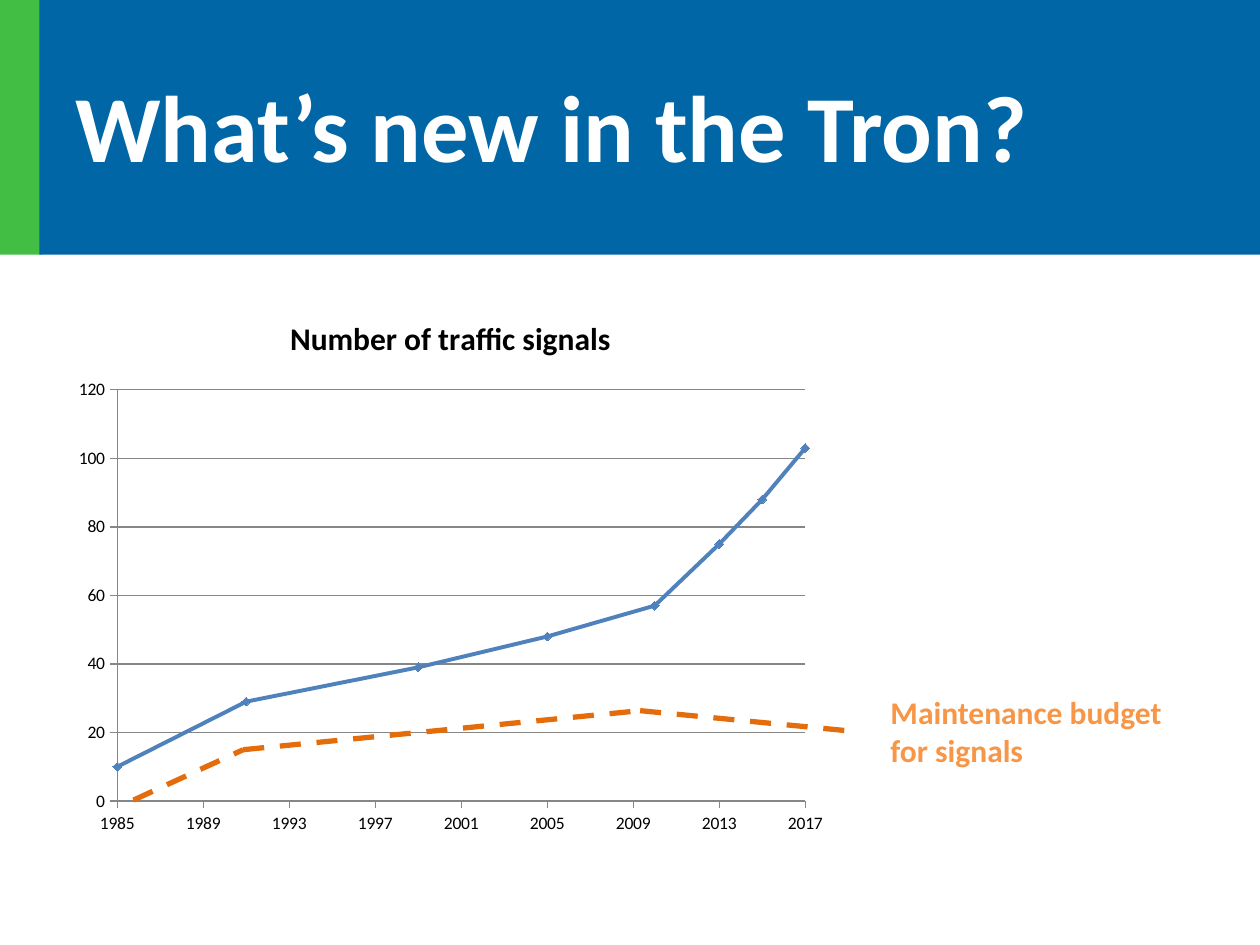
from lxml import etree
from pptx import Presentation
from pptx.chart.data import XyChartData
from pptx.dml.color import RGBColor
from pptx.enum.chart import XL_CHART_TYPE as Kind, XL_MARKER_STYLE as Mark, XL_TICK_MARK as Tick
from pptx.enum.dml import MSO_LINE
from pptx.enum.shapes import MSO_CONNECTOR, MSO_SHAPE
from pptx.enum.text import MSO_ANCHOR
from pptx.oxml import parse_xml
from pptx.oxml.ns import nsdecls, qn
from pptx.util import Pt

GREEN = RGBColor(0x42, 0xBE, 0x44)
NAVY = RGBColor(0x00, 0x66, 0xA5)
WHITE = RGBColor(0xFF, 0xFF, 0xFF)
BLACK = RGBColor(0x00, 0x00, 0x00)
GRAY = RGBColor(0x86, 0x86, 0x86)
BLUE = RGBColor(0x4F, 0x81, 0xBD)
RUST = RGBColor(0xE4, 0x6C, 0x0A)
PEACH = RGBColor(0xF7, 0x96, 0x46)


def style(font, size, color, bold):
    font.name = "Calibri"
    font.size = Pt(size)
    font.color.rgb = color
    font.bold = bold


def label(text, box, size, color, anchor):
    frame = slide.shapes.add_textbox(*map(Pt, box)).text_frame
    frame.word_wrap = True
    frame.vertical_anchor = anchor
    para = frame.paragraphs[0]
    para.text = text
    style(para.font, size, color, True)


deck = Presentation()
deck.slide_width = Pt(720)
deck.slide_height = Pt(540)
slide = deck.slides.add_slide(deck.slide_layouts[6])

for left, width, color in [(-3, 27, GREEN), (22.5, 697.5, NAVY)]:
    band = slide.shapes.add_shape(MSO_SHAPE.RECTANGLE, Pt(left), Pt(-2), Pt(width), Pt(147.5))
    band.shadow.inherit = False
    band.fill.solid()
    band.fill.fore_color.rgb = color
    band.line.fill.background()

label("What’s new in the Tron?", (36, 26, 648, 90), 54, WHITE, MSO_ANCHOR.MIDDLE)

data = XyChartData()
signals = data.add_series("Series 1")
for year, count in [(1985, 10), (1991, 29), (1999, 39), (2005, 48),
                    (2010, 57), (2013, 75), (2015, 88), (2017, 103)]:
    signals.add_data_point(year, count)

chart = slide.shapes.add_chart(
    Kind.XY_SCATTER_SMOOTH, Pt(36), Pt(167.75), Pt(442.8), Pt(314.65), data).chart
style(chart.font, 10, BLACK, False)
chart.has_legend = False
chart.has_title = True
para = chart.chart_title.text_frame.paragraphs[0]
para.text = "Number of traffic signals"
style(para.font, 18, BLACK, True)
chart.chart_title.include_in_layout = False

years, counts = chart.category_axis, chart.value_axis
for axis, low, high, step in [(years, 1985, 2017, 4), (counts, 0, 120, 20)]:
    axis.minimum_scale = low
    axis.maximum_scale = high
    axis.major_unit = step
    axis.major_tick_mark = Tick.OUTSIDE
    axis.minor_tick_mark = Tick.NONE
    axis.format.line.color.rgb = GRAY
    axis.format.line.width = Pt(0.75)
    axis.tick_labels.number_format = "General"
    axis.tick_labels.number_format_is_linked = False
years.has_major_gridlines = False
grid = counts.major_gridlines.format.line
grid.color.rgb = GRAY
grid.width = Pt(0.75)

plot = chart.plots[0]
plot.vary_by_categories = False
curve = plot.series[0]
curve.smooth = True
curve.format.line.color.rgb = BLUE
curve.format.line.width = Pt(2.25)
curve.marker.style = Mark.DIAMOND
curve.marker.size = 5
curve.marker.format.fill.solid()
curve.marker.format.fill.fore_color.rgb = BLUE
curve.marker.format.line.color.rgb = BLUE

area = chart._chartSpace.chart.plotArea
for old in area.findall(qn("c:layout")):
    area.remove(old)
area.insert(0, parse_xml(
    f'<c:layout {nsdecls("c")}><c:manualLayout><c:layoutTarget val="inner"/>'
    '<c:xMode val="edge"/><c:yMode val="edge"/><c:x val="0.07"/><c:y val="0.175"/>'
    '<c:w val="0.888"/><c:h val="0.747"/></c:manualLayout></c:layout>'))

budget = [(76.3, 457.2), (139, 428.4), (365.8, 406.1), (484.6, 417.6)]
for start, end in zip(budget, budget[1:]):
    dash = slide.shapes.add_connector(MSO_CONNECTOR.STRAIGHT, *map(Pt, start + end))
    dash.line.color.rgb = RUST
    dash.line.width = Pt(3)
    dash.line.dash_style = MSO_LINE.DASH
    etree.SubElement(dash._element.spPr, qn("a:effectLst"))

label("Maintenance budget for signals", (501.8, 392.4, 175.7, 51), 18, PEACH, MSO_ANCHOR.TOP)

deck.save("out.pptx")
